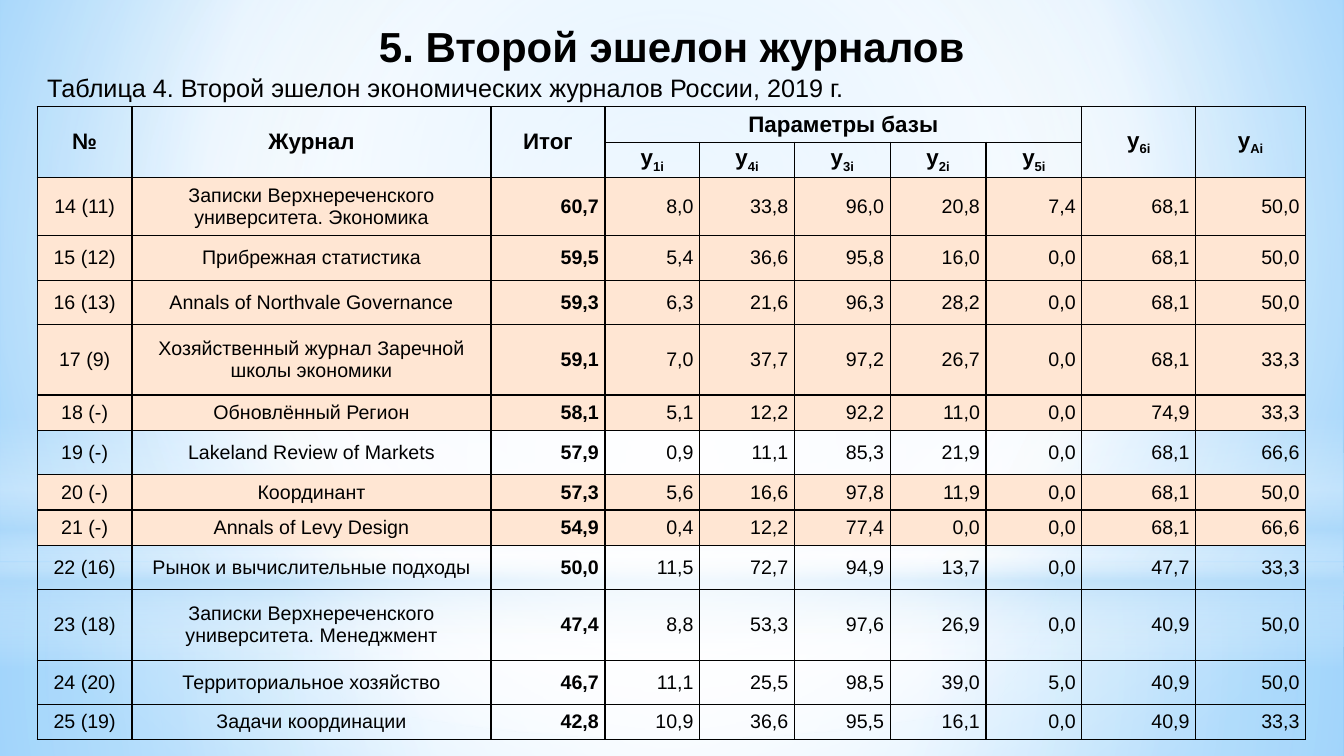
from dataclasses import dataclass

from lxml.etree import SubElement
from pptx import Presentation
from pptx.dml.color import RGBColor
from pptx.enum.shapes import MSO_SHAPE
from pptx.enum.text import MSO_ANCHOR, PP_ALIGN
from pptx.oxml import parse_xml
from pptx.oxml.ns import nsdecls, qn
from pptx.util import Inches, Pt


@dataclass(frozen=True)
class Theme:
    font: str = "Arial"
    ink: str = "000000"
    tint: str = "FFE6D3"
    white: str = "FFFFFF"
    haze: str = "B4DCFA"
    title_size: int = 30
    caption_size: int = 18
    header_size: int = 16
    body_size: int = 14
    border: float = 1
    cell_inset: float = 0.06


THEME = Theme()
WIDTH, HEIGHT = 13.33, 7.5
MARGIN = 0.37
HORIZON = 5.58  # height of the sky part of the backdrop

COLUMN_WIDTHS = [0.94, 3.56, 1.13, 0.94, 0.94, 0.95, 0.95, 0.95, 1.13, 1.09]
HEADER_ROW = 0.35
# (row, column, last row, last column, text, subscript)
HEADERS = [
    (0, 0, 1, 0, "№", ""), (0, 1, 1, 1, "Журнал", ""), (0, 2, 1, 2, "Итог", ""),
    (0, 3, 0, 7, "Параметры базы", ""),
    (0, 8, 1, 8, "y", "6i"), (0, 9, 1, 9, "y", "Ai"),
] + [(1, 3 + i, 1, 3 + i, "y", f"{n}i") for i, n in enumerate((1, 4, 3, 2, 5))]
# (row height, tinted, number, journal, values)
JOURNALS = [
    (0.58, True, "14 (11)", "Записки Верхнереченского университета. Экономика",
     "60,7 8,0 33,8 96,0 20,8 7,4 68,1 50,0"),
    (0.44, True, "15 (12)", "Прибрежная статистика",
     "59,5 5,4 36,6 95,8 16,0 0,0 68,1 50,0"),
    (0.44, True, "16 (13)", "Annals of Northvale Governance",
     "59,3 6,3 21,6 96,3 28,2 0,0 68,1 50,0"),
    (0.7, True, "17 (9)", "Хозяйственный журнал Заречной школы экономики",
     "59,1 7,0 37,7 97,2 26,7 0,0 68,1 33,3"),
    (0.35, True, "18 (-)", "Обновлённый Регион",
     "58,1 5,1 12,2 92,2 11,0 0,0 74,9 33,3"),
    (0.44, False, "19 (-)", "Lakeland Review of Markets",
     "57,9 0,9 11,1 85,3 21,9 0,0 68,1 66,6"),
    (0.35, True, "20 (-)", "Координант",
     "57,3 5,6 16,6 97,8 11,9 0,0 68,1 50,0"),
    (0.35, True, "21 (-)", "Annals of Levy Design",
     "54,9 0,4 12,2 77,4 0,0 0,0 68,1 66,6"),
    (0.44, False, "22 (16)", "Рынок и вычислительные подходы",
     "50,0 11,5 72,7 94,9 13,7 0,0 47,7 33,3"),
    (0.7, False, "23 (18)", "Записки Верхнереченского университета. Менеджмент",
     "47,4 8,8 53,3 97,6 26,9 0,0 40,9 50,0"),
    (0.44, False, "24 (20)", "Территориальное хозяйство",
     "46,7 11,1 25,5 98,5 39,0 5,0 40,9 50,0"),
    (0.35, False, "25 (19)", "Задачи координации",
     "42,8 10,9 36,6 95,5 16,1 0,0 40,9 33,3"),
]


def set_format(target, values):
    for name, value in values.items():
        setattr(target, name, value)


def gradient_fill(stops, focus=None):
    """Stops are (position, colour, opacity) in percent; no focus means top to bottom."""
    fill = parse_xml(f'<a:gradFill {nsdecls("a")} rotWithShape="1"><a:gsLst/></a:gradFill>')
    for position, color, opacity in stops:
        stop = SubElement(fill[0], qn("a:gs"), pos=str(position * 1000))
        tone = SubElement(stop, qn("a:srgbClr"), val=color)
        if opacity < 100:
            SubElement(tone, qn("a:alpha"), val=str(opacity * 1000))
    if focus is None:
        SubElement(fill, qn("a:lin"), ang="5400000", scaled="0")
    else:
        sides = {side: str(share * 1000) for side, share in zip("ltrb", focus)}
        SubElement(SubElement(fill, qn("a:path"), path="circle"), qn("a:fillToRect"), sides)
    return fill


def apply_gradient(fill_format, element, stops, focus=None):
    fill_format.solid()
    solid = next(element.iter(qn("a:solidFill")))
    solid.getparent().replace(solid, gradient_fill(stops, focus))


def add_backdrop(slide):
    apply_gradient(slide.background.fill, slide.element,
                   [(0, "9ED5FF", 100), (60, THEME.white, 100), (100, "5BB9FF", 100)],
                   (20, 10, 20, 60))
    white, haze, center = THEME.white, THEME.haze, (50, 50, 50, 50)
    layers = [  # preset, top, height, stops, focus
        (MSO_SHAPE.RECTANGLE, HORIZON, HEIGHT - HORIZON,
         [(0, white, 91), (37, white, 76), (100, haze, 79)], center),
        (MSO_SHAPE.RECTANGLE, 0, HORIZON,
         [(0, white, 89), (48, white, 62), (100, haze, 79)], center),
        (MSO_SHAPE.RECTANGLE, 4.12, 2.5,
         [(0, white, 0), (29, white, 30), (45, haze, 40), (55, white, 26),
          (65, haze, 60), (100, white, 0)], None),
        (MSO_SHAPE.OVAL, 1.75, HORIZON, [(0, white, 100), (56, white, 0)], center),
    ]
    for preset, top, height, stops, focus in layers:
        shape = slide.shapes.add_shape(preset, 0, Inches(top), Inches(WIDTH), Inches(height))
        shape.shadow.inherit = False
        shape.line.fill.background()
        apply_gradient(shape.fill, shape.element.spPr, stops, focus)


def write(paragraph, text, size, bold=False, align=PP_ALIGN.CENTER, subscript=""):
    paragraph.alignment = align
    for part, baseline in ((text, 0), (subscript, -25000)):
        if part:
            run = paragraph.add_run()
            run.text = part
            set_format(run.font, {"name": THEME.font, "size": Pt(size), "bold": bold})
            run.font.color.rgb = RGBColor.from_string(THEME.ink)
            if baseline:
                run.font._element.set("baseline", str(baseline))


def add_heading(slide, box, text, size, bold, align, anchor):
    frame = slide.shapes.add_textbox(*map(Inches, box)).text_frame
    set_format(frame, {"word_wrap": True, "vertical_anchor": anchor})
    frame.paragraphs[0].line_spacing = 1.5
    write(frame.paragraphs[0], text, size, bold, align)


def style_cell(cell, tinted):
    inset = Inches(THEME.cell_inset)
    set_format(cell, {"margin_left": inset, "margin_right": inset, "margin_top": 0,
                      "margin_bottom": 0, "vertical_anchor": MSO_ANCHOR.MIDDLE})
    if tinted:
        cell.fill.solid()
        cell.fill.fore_color.rgb = RGBColor.from_string(THEME.tint)
    else:
        cell.fill.background()
    properties = cell._tc.get_or_add_tcPr()
    for index, side in enumerate("LRTB"):
        properties.insert(index, parse_xml(
            f'<a:ln{side} {nsdecls("a")} w="{Pt(THEME.border)}"><a:solidFill>'
            f'<a:srgbClr val="{THEME.ink}"/></a:solidFill></a:ln{side}>'))


def add_journal_table(slide, box):
    heights = [HEADER_ROW] * 2 + [journal[0] for journal in JOURNALS]
    table = slide.shapes.add_table(len(heights), len(COLUMN_WIDTHS), *map(Inches, box)).table
    set_format(table, {"first_row": False, "horz_banding": False})
    for column, width in zip(table.columns, COLUMN_WIDTHS):
        column.width = Inches(width)
    for index, height in enumerate(heights):
        table.rows[index].height = Inches(height)
        for cell in table.rows[index].cells:
            style_cell(cell, index > 1 and JOURNALS[index - 2][1])
    # Two-level header
    for row, column, last_row, last_column, text, subscript in HEADERS:
        cell = table.cell(row, column)
        if (row, column) != (last_row, last_column):
            cell.merge(table.cell(last_row, last_column))
        write(cell.text_frame.paragraphs[0], text, THEME.header_size, True, subscript=subscript)
    # Journal rows: names centred, values to the right, total in bold
    for row, (_, _, number, journal, values) in enumerate(JOURNALS, start=2):
        for column, text in enumerate([number, journal, *values.split()]):
            align = PP_ALIGN.CENTER if column < 2 else PP_ALIGN.RIGHT
            write(table.cell(row, column).text_frame.paragraphs[0], text,
                  THEME.body_size, column == 2, align)


def main():
    presentation = Presentation()
    set_format(presentation, {"slide_width": Inches(WIDTH), "slide_height": Inches(HEIGHT)})
    slide = presentation.slides.add_slide(presentation.slide_layouts[6])
    content_width = WIDTH - 2 * MARGIN
    add_backdrop(slide)
    add_heading(slide, (0, 0.06, WIDTH, 0.54), "5. Второй эшелон журналов",
                THEME.title_size, True, PP_ALIGN.CENTER, MSO_ANCHOR.MIDDLE)
    add_heading(slide, (MARGIN, 0.52, content_width, 0.56),
                "Таблица 4. Второй эшелон экономических журналов России, 2019 г.",
                THEME.caption_size, False, PP_ALIGN.JUSTIFY, MSO_ANCHOR.TOP)
    add_journal_table(slide, (MARGIN, 1.06, content_width, 6.3))
    presentation.save("out.pptx")


if __name__ == "__main__":
    main()
